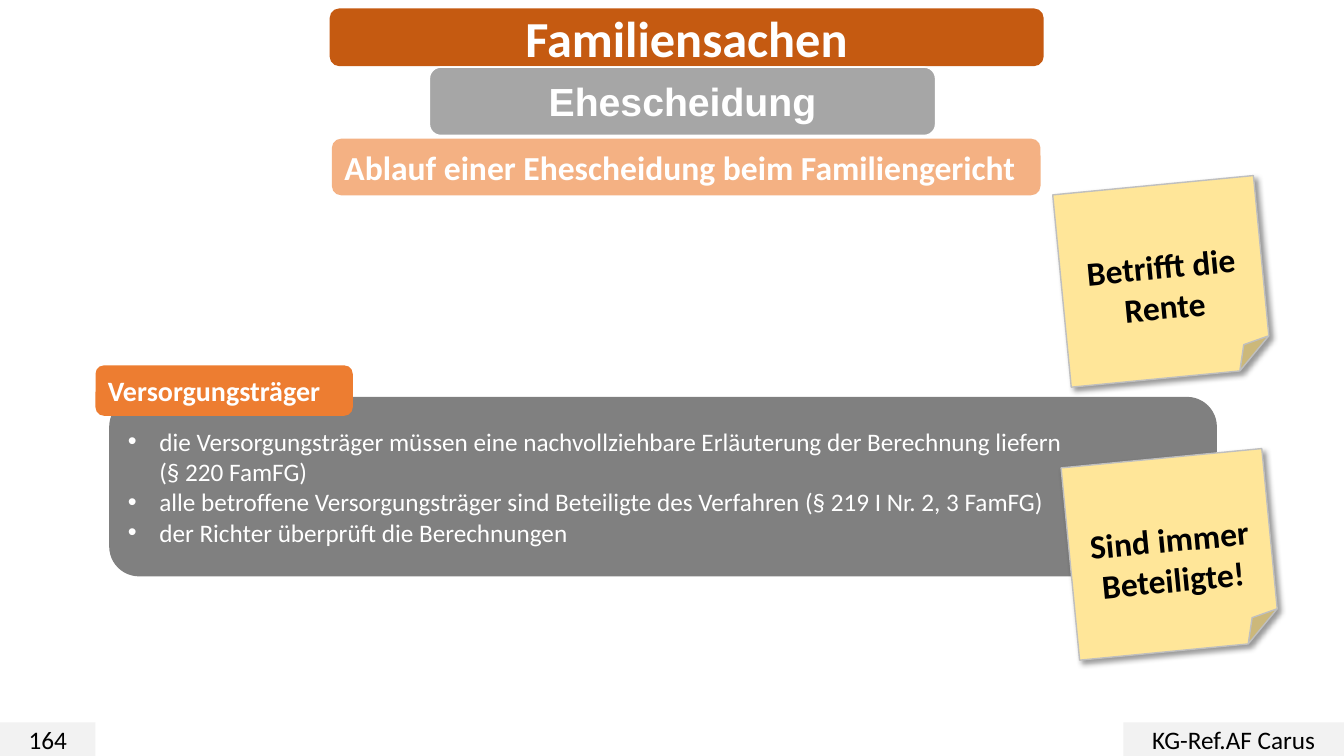
from dataclasses import dataclass

from lxml import etree
from pptx import Presentation
from pptx import util as u
from pptx.dml.color import RGBColor
from pptx.enum import shapes, text
from pptx.oxml.ns import qn

PX = 9525  # EMU per px, 96 px to the inch
WHITE, BLACK = "FFFFFF", "000000"
ROUND = shapes.MSO_SHAPE.ROUNDED_RECTANGLE
RECT = shapes.MSO_SHAPE.RECTANGLE
NOTE = shapes.MSO_SHAPE.FOLDED_CORNER
LEFT, CENTER = text.PP_ALIGN.LEFT, text.PP_ALIGN.CENTER


@dataclass
class Box:
    x: int
    y: int
    w: int
    h: int
    fill: str
    lines: list[str]
    size: int
    color: str = WHITE
    bold: bool = True
    align: text.PP_ALIGN = CENTER
    kind: shapes.MSO_SHAPE = ROUND
    font: str = "Calibri"
    outline: str = ""
    bullets: bool = False


def rgb(color: str) -> RGBColor:
    return RGBColor.from_string(color)


def add_bullet(p) -> None:
    pPr = p._p.get_or_add_pPr()
    pPr.set("marL", str(30 * PX))
    pPr.set("indent", str(-30 * PX))
    etree.SubElement(pPr, qn("a:buFont")).set("typeface", "Arial")
    etree.SubElement(pPr, qn("a:buChar")).set("char", "•")


def draw_box(s, b: Box):
    sp = s.shapes.add_shape(b.kind, b.x * PX, b.y * PX, b.w * PX, b.h * PX)
    sp.shadow.inherit = False
    sp.fill.solid()
    sp.fill.fore_color.rgb = rgb(b.fill)
    if b.outline:
        sp.line.color.rgb = rgb(b.outline)
        sp.line.width = u.Pt(1)
    else:
        sp.line.fill.background()

    tf = sp.text_frame
    tf.word_wrap = True
    tf.vertical_anchor = text.MSO_ANCHOR.MIDDLE
    for i, line in enumerate(b.lines):
        p = tf.add_paragraph() if i else tf.paragraphs[0]
        p.alignment = b.align
        if b.bullets:
            add_bullet(p)
        for j, part in enumerate(line.split("\n")):
            if j:
                p.add_line_break()
            r = p.add_run()
            r.text = part
            r.font.name = b.font
            r.font.size = u.Pt(b.size)
            r.font.bold = b.bold
            r.font.color.rgb = rgb(b.color)
    return sp


def draw_note(s, x: int, y: int, words: str) -> None:
    """Tilted sticky note with a soft shadow and its text below the middle."""
    sp = draw_box(s, Box(x, y, 192, 184, "FFE699", [words], 24, BLACK,
                         kind=NOTE, outline="BFBFBF"))
    sp.rotation = 354.5
    sp.text_frame.margin_top = 44 * PX
    effects = sp._element.spPr.find(qn("a:effectLst"))
    shadow = etree.SubElement(effects, qn("a:outerShdw"), blurRad=str(u.Pt(4)),
                              dist=str(u.Pt(3)), dir=str(45 * 60000),
                              algn="tl", rotWithShape="0")
    color = etree.SubElement(shadow, qn("a:srgbClr"), val=BLACK)
    etree.SubElement(color, qn("a:alpha"), val="40000")


BOXES = [
    # Title and footer
    Box(314, 8, 680, 55, "C55A11", ["Familiensachen"], 36),
    Box(0, 688, 91, 32, "F2F2F2", ["164"], 18, BLACK, False, kind=RECT),
    Box(1070, 688, 210, 32, "F2F2F2", ["KG-Ref.AF Carus"], 18, BLACK, False,
        kind=RECT),
    # Subtitles
    Box(409, 64, 482, 65, "A6A6A6", ["Ehescheidung"], 28, font="Arial",
        outline=WHITE),
    Box(316, 132, 675, 54, "F4B183",
        ["Ablauf einer Ehescheidung beim Familiengericht"], 24, align=LEFT),
    # Content panel and its label
    Box(104, 378, 1055, 171, "808080", [
        "die Versorgungsträger müssen eine nachvollziehbare Erläuterung "
        "der Berechnung liefern\n(§ 220 FamFG)",
        "alle betroffene Versorgungsträger sind Beteiligte des Verfahren "
        "(§ 219 I Nr. 2, 3 FamFG)",
        "der Richter überprüft die Berechnungen",
    ], 18, bold=False, align=LEFT, bullets=True),
    Box(91, 348, 245, 48, "ED7D31", ["Versorgungsträger"], 20, align=LEFT),
]


def main() -> None:
    prs = Presentation()
    prs.slide_width, prs.slide_height = 1280 * PX, 720 * PX
    s = prs.slides.add_slide(prs.slide_layouts[6])
    for b in BOXES:
        draw_box(s, b)

    # Sticky notes
    draw_note(s, 1011, 176, "Betrifft die Rente")
    draw_note(s, 1019, 436, "Sind immer Beteiligte!")
    prs.save("out.pptx")


if __name__ == "__main__":
    main()
